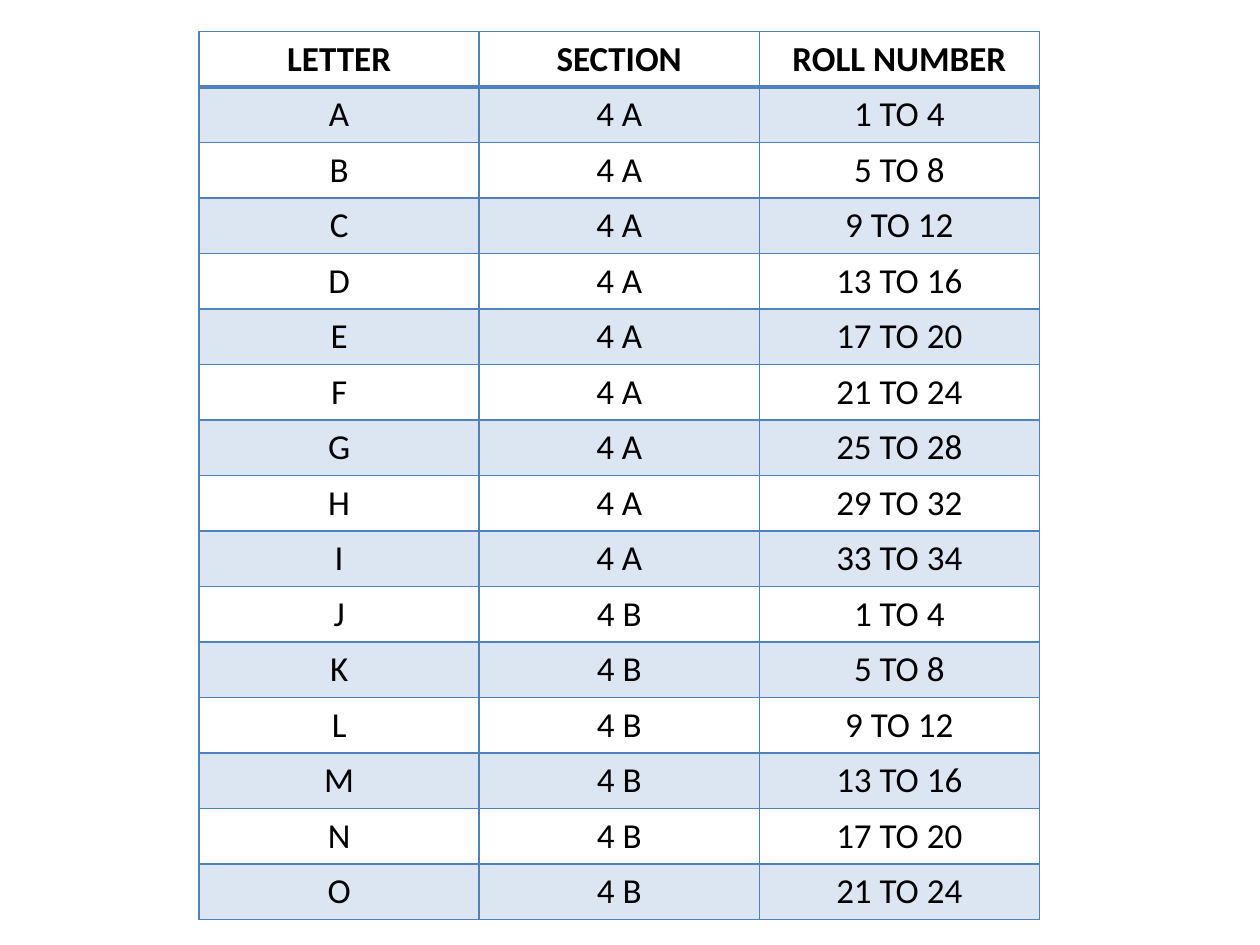
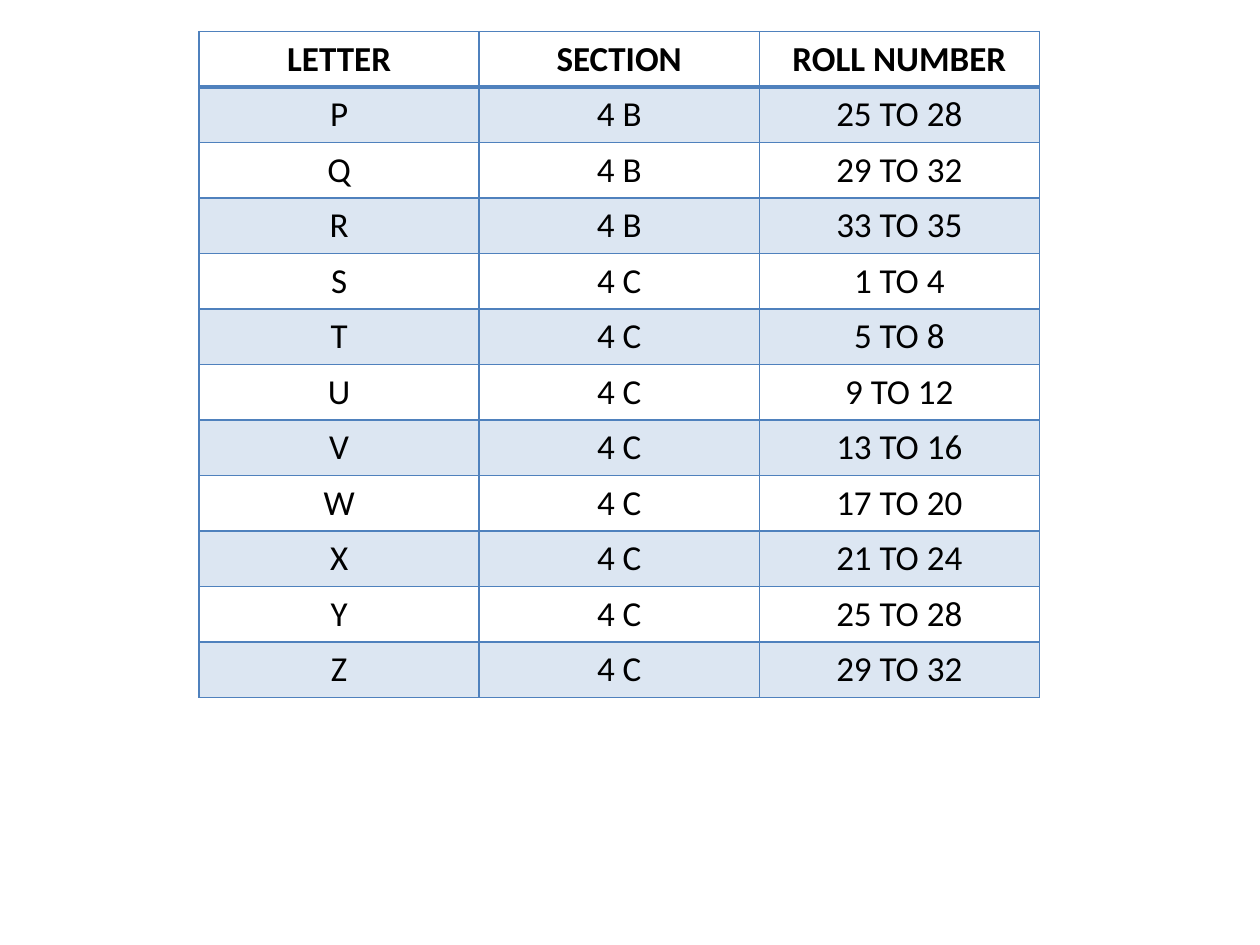
import pptx
import pptx.dml.color
import pptx.enum.text
import pptx.oxml
import pptx.oxml.ns
import pptx.util

Inches = pptx.util.Inches
RGBColor = pptx.dml.color.RGBColor

BLUE = RGBColor(0x4F, 0x81, 0xBD)
PALE_BLUE = RGBColor(0xDC, 0xE6, 0xF2)
WHITE = RGBColor(0xFF, 0xFF, 0xFF)
BLACK = RGBColor(0, 0, 0)

HEADINGS = ("LETTER", "SECTION", "ROLL NUMBER")
LETTERS = "ABCDEFGHIJKLMNOPQRSTUVWXYZ"
SECTION_SIZES = {"4 A": 34, "4 B": 35, "4 C": 32}
GROUP_SIZE = 4
ROWS_PER_PAGE = 15


class RollBook:
    """Holds the table style and the current slide."""

    font_name = "Calibri"
    font_size = pptx.util.Pt(20)
    left, top = Inches(1.58), Inches(0.25)
    width, row_height = Inches(6.67), Inches(0.44)

    def __init__(self):
        self.deck = pptx.Presentation()
        self.deck.slide_width = Inches(10)
        self.deck.slide_height = Inches(7.5)
        self.page = None

    def add_page(self):
        self.page = self.deck.slides.add_slide(self.deck.slide_layouts[6])

    def add_roll_table(self, rows):
        lines = [HEADINGS, *rows]
        frame = self.page.shapes.add_table(
            len(lines), len(HEADINGS), self.left, self.top,
            self.width, self.row_height * len(lines))
        table = frame.table
        table.horz_banding = False
        for row, line in enumerate(lines):
            for column, text in enumerate(line):
                self.style_cell(table.cell(row, column), text, row)

    def style_cell(self, cell, text, row):
        self.add_border(cell, "lnL", 1)
        self.add_border(cell, "lnR", 1)
        self.add_border(cell, "lnT", 2 if row == 1 else 1)
        self.add_border(cell, "lnB", 2 if row == 0 else 1)
        cell.fill.solid()
        cell.fill.fore_color.rgb = PALE_BLUE if row % 2 else WHITE
        cell.text_frame.text = text
        para = cell.text_frame.paragraphs[0]
        para.alignment = pptx.enum.text.PP_ALIGN.CENTER
        font = para.runs[0].font
        font.name, font.size = self.font_name, self.font_size
        font.bold = row == 0
        font.color.rgb = BLACK

    def add_border(self, cell, side, points):
        namespace = pptx.oxml.ns.nsdecls("a")
        border = pptx.oxml.parse_xml(
            f'<a:{side} {namespace} w="{pptx.util.Pt(points)}"><a:solidFill>'
            f'<a:srgbClr val="{BLUE}"/></a:solidFill></a:{side}>')
        cell._tc.get_or_add_tcPr().append(border)


def roll_rows():
    groups = [
        (section, f"{first} TO {min(first + GROUP_SIZE - 1, size)}")
        for section, size in SECTION_SIZES.items()
        for first in range(1, size + 1, GROUP_SIZE)
    ]
    return [(letter, *group) for letter, group in zip(LETTERS, groups)]


def main():
    book = RollBook()
    rows = roll_rows()
    for start in range(0, len(rows), ROWS_PER_PAGE):
        book.add_page()
        book.add_roll_table(rows[start:start + ROWS_PER_PAGE])
    book.deck.save("out.pptx")


if __name__ == "__main__":
    main()
